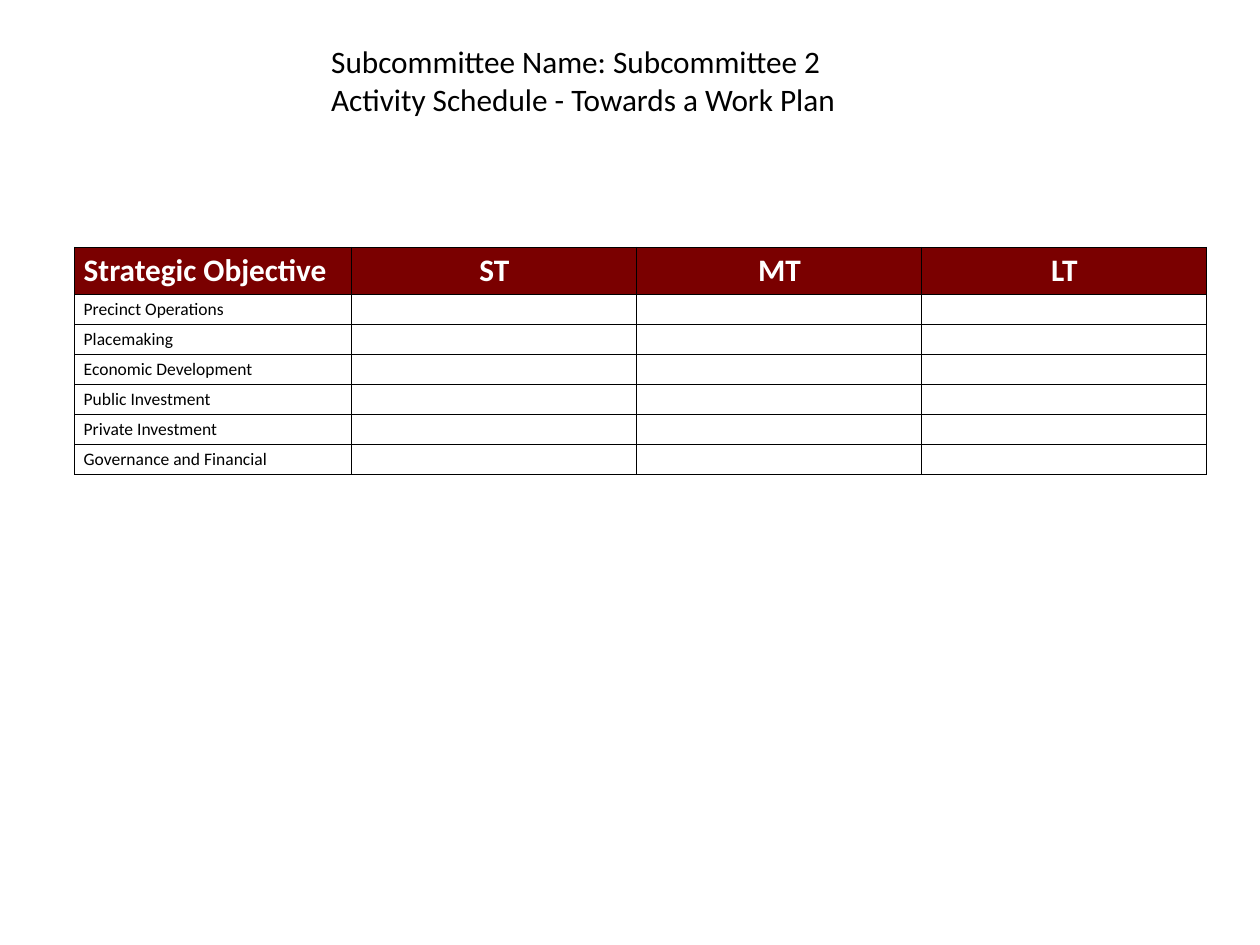
from lxml import etree
from pptx import Presentation
from pptx.dml.color import RGBColor
from pptx.enum import text
from pptx.oxml import ns
from pptx.util import Inches, Pt

# Content
TITLE = ["Subcommittee Name: Subcommittee 2", "Activity Schedule - Towards a Work Plan"]
HEADERS = ["Strategic Objective", "ST", "MT", "LT"]
OBJECTIVES = [
    "Precinct Operations",
    "Placemaking",
    "Economic Development",
    "Public Investment",
    "Private Investment",
    "Governance and Financial",
]

# Format
FONT = "Calibri"
BLACK = RGBColor(0x00, 0x00, 0x00)
WHITE = RGBColor(0xFF, 0xFF, 0xFF)
MAROON = RGBColor(0x7A, 0x00, 0x00)
LEFT, TOP, WIDTH = 0.83, 2.75, 12.58
OBJECTIVE_WIDTH = 3.08
HEADER_HEIGHT, ROW_HEIGHT = 0.52, 0.33


def write(frame, lines, size, color=BLACK, bold=False, align=text.PP_ALIGN.LEFT):
    """Put one paragraph per line; an empty line keeps the text size."""
    for index, line in enumerate(lines):
        paragraph = frame.paragraphs[0] if index == 0 else frame.add_paragraph()
        paragraph.alignment = align
        if not line:
            etree.SubElement(paragraph._p, ns.qn("a:endParaRPr"), sz=str(size * 100))
            continue
        run = paragraph.add_run()
        run.text = line
        run.font.name = FONT
        run.font.size = Pt(size)
        run.font.bold = bold
        run.font.color.rgb = color


def add_borders(cell):
    properties = cell._tc.get_or_add_tcPr()
    for side in ("lnL", "lnR", "lnT", "lnB"):
        line = etree.SubElement(properties, ns.qn(f"a:{side}"), w=str(Pt(1)))
        fill = etree.SubElement(line, ns.qn("a:solidFill"))
        etree.SubElement(fill, ns.qn("a:srgbClr"), val=str(BLACK))


def add_title(slide):
    title = slide.shapes.title
    title.left, title.top = Inches(3.58), Inches(0.42)
    title.width, title.height = Inches(5.86), Inches(0.94)
    frame = title.text_frame
    frame.word_wrap = False
    frame.auto_size = text.MSO_AUTO_SIZE.SHAPE_TO_FIT_TEXT
    frame.vertical_anchor = text.MSO_ANCHOR.TOP
    write(frame, TITLE, size=25)


def add_schedule(slide):
    rows = [HEADERS] + [[name] + [""] * (len(HEADERS) - 1) for name in OBJECTIVES]
    heights = [HEADER_HEIGHT] + [ROW_HEIGHT] * len(OBJECTIVES)
    term_width = (WIDTH - OBJECTIVE_WIDTH) / (len(HEADERS) - 1)
    table = slide.shapes.add_table(
        len(rows), len(HEADERS), Inches(LEFT), Inches(TOP), Inches(WIDTH), Inches(sum(heights))
    ).table
    for index, column in enumerate(table.columns):
        column.width = Inches(term_width if index else OBJECTIVE_WIDTH)

    for row_index, values in enumerate(rows):
        table.rows[row_index].height = Inches(heights[row_index])
        for column_index, value in enumerate(values):
            cell = table.cell(row_index, column_index)
            add_borders(cell)
            if row_index == 0:
                cell.fill.solid()
                cell.fill.fore_color.rgb = MAROON
                align = text.PP_ALIGN.CENTER if column_index else text.PP_ALIGN.LEFT
                write(cell.text_frame, [value], size=25, color=WHITE, bold=True, align=align)
            else:
                cell.fill.background()
                write(cell.text_frame, [value], size=14)


def main():
    presentation = Presentation()
    presentation.slide_width, presentation.slide_height = Inches(14), Inches(10.5)
    slide = presentation.slides.add_slide(presentation.slide_layouts[5])
    add_schedule(slide)
    add_title(slide)
    presentation.save("out.pptx")


if __name__ == "__main__":
    main()
